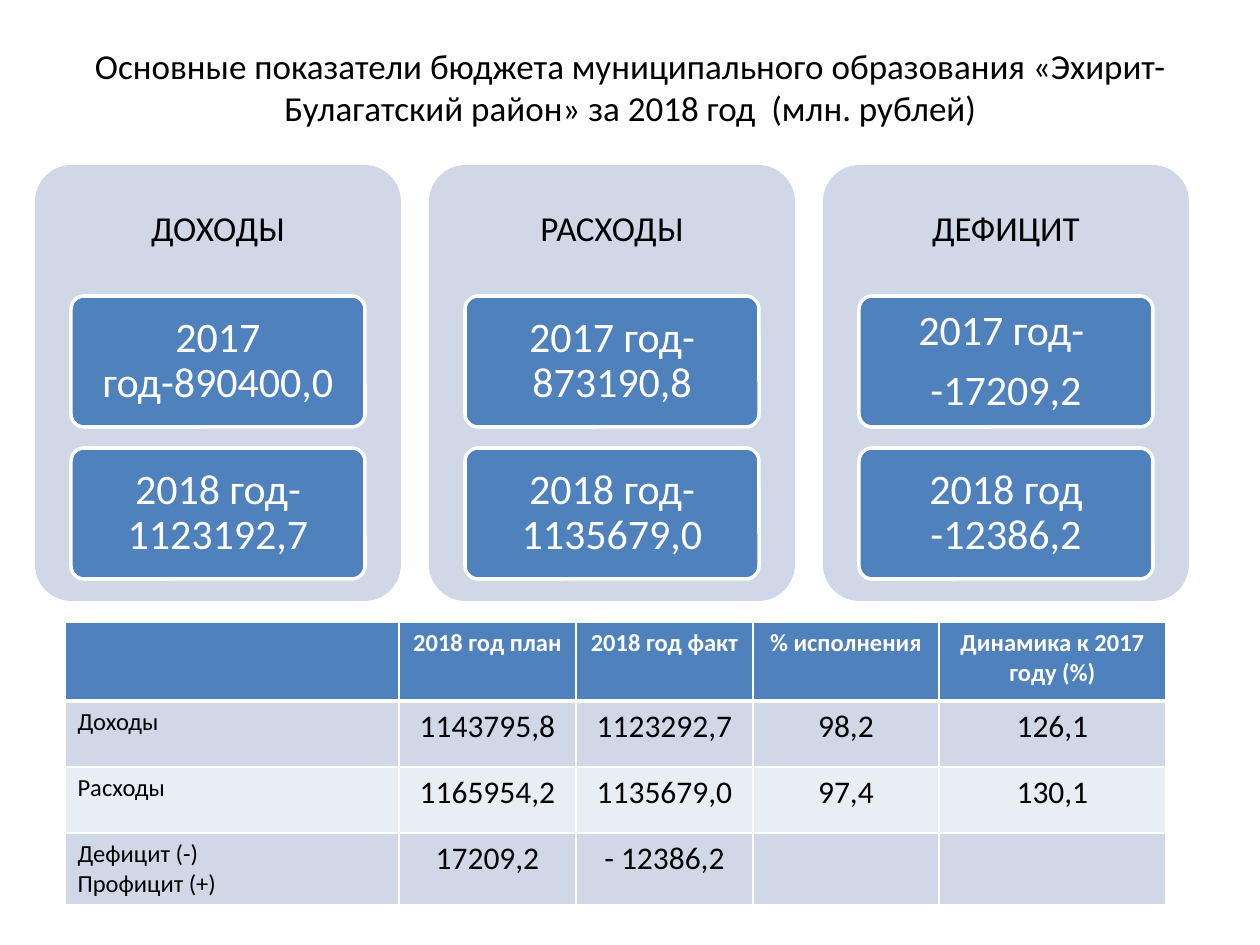
from dataclasses import dataclass
from lxml import etree
from pptx import Presentation
from pptx.dml.color import RGBColor
from pptx.enum.shapes import MSO_SHAPE
from pptx.enum.text import MSO_ANCHOR, PP_ALIGN
from pptx.oxml.ns import qn
from pptx.util import Emu, Pt

ROUND = MSO_SHAPE.ROUNDED_RECTANGLE
CENTER, LEFT = PP_ALIGN.CENTER, PP_ALIGN.LEFT
MIDDLE, TOP = MSO_ANCHOR.MIDDLE, MSO_ANCHOR.TOP

TITLE = ("Основные показатели бюджета муниципального образования "
         "«Эхирит-Булагатский район» за 2018 год  (млн. рублей)")
PANELS = [
    ("ДОХОДЫ", ["2017 год-890400,0", "2018 год- 1123192,7"]),
    ("РАСХОДЫ", ["2017 год- 873190,8", "2018 год- 1135679,0"]),
    ("ДЕФИЦИТ", ["2017 год- \n-17209,2", "2018 год -12386,2"]),
]
ROWS = [
    ["", "2018 год план", "2018 год факт", "% исполнения", "Динамика к 2017 году (%)"],
    ["Доходы", "1143795,8", "1123292,7", "98,2", "126,1"],
    ["Расходы", "1165954,2", "1135679,0", "97,4", "130,1"],
    ["Дефицит (-)\nПрофицит (+)", "17209,2", "- 12386,2", "", ""],
]
COL_WIDTHS = [334, 177, 177, 186, 227]
ROW_HEIGHTS = [79, 66, 66, 66]


@dataclass(frozen=True)
class Theme:
    font: str = "Calibri"
    dark: str = "000000"
    white: str = "FFFFFF"
    accent: str = "4F81BD"
    panel: str = "D0D8E8"
    band: str = "E9EDF4"
    heading: int = 20
    value: int = 24
    label: int = 14
    number: int = 18


THEME = Theme()


def px(n):
    return Emu(round(n * 914400 / 126))


def rgb(color):
    return RGBColor.from_string(color)


def write(tf, text, size, color, align=CENTER, anchor=MIDDLE, bold=False):
    tf.text = text
    tf.word_wrap = True
    tf.vertical_anchor = anchor
    for p in tf.paragraphs:
        p.alignment = align
        p.font.size = Pt(size)
        for r in p.runs:
            r.font.name = THEME.font
            r.font.size = Pt(size)
            r.font.bold = bold
            r.font.color.rgb = rgb(color)


def write_diagram(tf, text, size, color, inset_x, inset_y):
    write(tf, text, size, color)
    tf.margin_left = tf.margin_right = px(inset_x)
    tf.margin_top = tf.margin_bottom = px(inset_y)
    for p in tf.paragraphs:
        p.line_spacing = 0.9
        p.space_after = Pt(size * 0.35)


def add_round(shapes, box, fill, line=None):
    sp = shapes.add_shape(ROUND, *map(px, box))
    sp.adjustments[0] = 0.1
    sp.shadow.inherit = False
    sp.fill.solid()
    sp.fill.fore_color.rgb = rgb(fill)
    if line:
        sp.line.color.rgb = rgb(line)
        sp.line.width = Pt(2)
    else:
        sp.line.fill.background()
    return sp


def add_panel(shapes, x, heading, values):
    top, width, height, head = 165, 366, 436, 131
    add_round(shapes, (x, top, width, height), THEME.panel)
    sp = shapes.add_textbox(px(x), px(top), px(width), px(head))
    write_diagram(sp.text_frame, heading, THEME.heading, THEME.dark, 10, 10)
    for i, value in enumerate(values):
        box = (x + 36, top + head + i * 152, 294, 131)
        sp = add_round(shapes, box, THEME.accent, THEME.white)
        write_diagram(sp.text_frame, value, THEME.value, THEME.white, 9, 6)


def set_borders(cell, widths):
    tc_pr = cell._tc.get_or_add_tcPr()
    for side, width in zip("LRTB", widths):
        ln = etree.SubElement(tc_pr, qn(f"a:ln{side}"), w=str(Pt(width)))
        fill = etree.SubElement(ln, qn("a:solidFill"))
        etree.SubElement(fill, qn("a:srgbClr"), val=THEME.white)


def add_budget_table(shapes):
    frame = shapes.add_table(len(ROWS), len(COL_WIDTHS), px(65), px(622),
                             px(sum(COL_WIDTHS)), px(sum(ROW_HEIGHTS)))
    table = frame.table
    for col, width in zip(table.columns, COL_WIDTHS):
        col.width = px(width)
    for row, height in zip(table.rows, ROW_HEIGHTS):
        row.height = px(height)
    for i, texts in enumerate(ROWS):
        header = i == 0
        fill = THEME.accent if header else THEME.panel if i % 2 else THEME.band
        for j, text in enumerate(texts):
            cell = table.cell(i, j)
            set_borders(cell, (1, 1, 3 if i == 1 else 1, 3 if header else 1))
            cell.fill.solid()
            cell.fill.fore_color.rgb = rgb(fill)
            write(cell.text_frame, text,
                  THEME.label if header or j == 0 else THEME.number,
                  THEME.white if header else THEME.dark,
                  CENTER if header or j else LEFT, TOP, header)


def main():
    prs = Presentation()
    prs.slide_width, prs.slide_height = px(1260), px(945)
    slide = prs.slides.add_slide(prs.slide_layouts[5])
    title = slide.shapes.title
    title.left, title.top, title.width, title.height = map(px, (64, 38, 1133, 97))
    write(title.text_frame, TITLE, THEME.heading, THEME.dark)
    for i, (heading, values) in enumerate(PANELS):
        add_panel(slide.shapes, 35 + i * 394, heading, values)
    add_budget_table(slide.shapes)
    prs.save("out.pptx")


if __name__ == "__main__":
    main()
